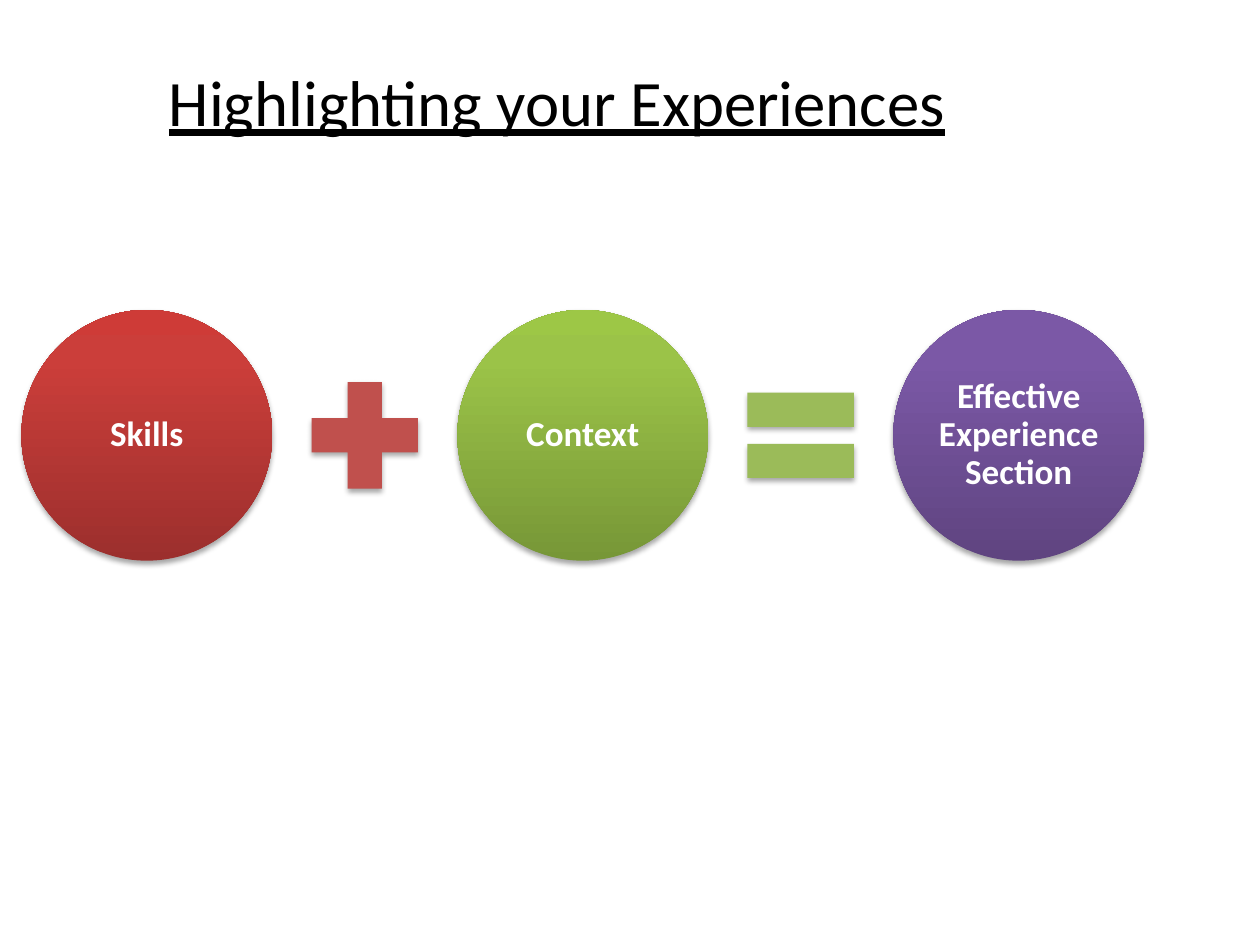
"""Build a slide that shows experience as an equation of circles."""
from copy import deepcopy
from dataclasses import dataclass

from lxml.etree import SubElement
from pptx import Presentation
from pptx.dml.color import RGBColor
from pptx.enum.shapes import MSO_SHAPE
from pptx.enum.text import MSO_ANCHOR, PP_ALIGN
from pptx.oxml.ns import qn
from pptx.util import Inches, Pt


@dataclass(frozen=True)
class Theme:
    """Colours and type sizes of the slide."""
    font: str = "Calibri"
    title_size: int = 37
    label_size: int = 20
    title: str = "000000"
    label: str = "FFFFFF"
    skills: tuple = ("9C2F2D", "CB3E3A", "CE3B37")
    context: tuple = ("779737", "9BC348", "9DC746")
    result: tuple = ("5F4480", "7B58A6", "7C57A8")
    plus: str = "C0504D"
    equal: str = "9BBB59"


THEME = Theme()
LEFT, PITCH, MIDDLE = 0.17, 3.46, 3.455
CIRCLE, SYMBOL = 1.99, 1.15


def add_text(tf, text, size, color, **style):
    """Write one centred run in a text frame."""
    tf.word_wrap = True
    tf.vertical_anchor = MSO_ANCHOR.MIDDLE
    p = tf.paragraphs[0]
    p.alignment = PP_ALIGN.CENTER
    r = p.add_run()
    r.text = text
    r.font.name = THEME.font
    r.font.size = Pt(size)
    r.font.color.rgb = RGBColor.from_string(color)
    for name, value in style.items():
        setattr(r.font, name, value)
    return p


def add_shadow(sp):
    """Give a shape a soft shadow just below it."""
    sp.shadow.inherit = False
    effects = sp._element.spPr.find(qn("a:effectLst"))
    shadow = SubElement(effects, qn("a:outerShdw"), blurRad=str(Pt(3.1)),
                        dist=str(Pt(1.8)), dir="5400000", rotWithShape="0")
    color = SubElement(shadow, qn("a:srgbClr"), val="000000")
    SubElement(color, qn("a:alpha"), val="35000")


def fill_gradient(sp, colors):
    """Fill a shape with three colours from bottom to top."""
    sp.fill.gradient()
    sp.fill.gradient_angle = 90
    stops = sp._element.spPr.find(qn("a:gradFill")).find(qn("a:gsLst"))
    stops.append(deepcopy(stops[0]))
    for stop, position, color in zip(sp.fill.gradient_stops, (0, 0.8, 1), colors):
        stop.position = position
        stop.color.rgb = RGBColor.from_string(color)


def add_shape(s, kind, left, size):
    """Add a square-bounded shape on the middle line."""
    sp = s.shapes.add_shape(kind, Inches(left), Inches(MIDDLE - size / 2),
                            Inches(size), Inches(size))
    sp.line.fill.background()
    add_shadow(sp)
    return sp


def add_circle(s, index, text, colors):
    """Add a labelled circle at its place in the equation."""
    sp = add_shape(s, MSO_SHAPE.OVAL, LEFT + index * PITCH, CIRCLE)
    fill_gradient(sp, colors)
    tf = sp.text_frame
    tf.margin_left = tf.margin_right = Inches(0.03)
    tf.margin_top = tf.margin_bottom = Inches(0.03)
    p = add_text(tf, text, THEME.label_size, THEME.label, bold=True)
    p.line_spacing = 0.9


def add_symbol(s, index, kind, color):
    """Add an operator centred in the gap after a circle."""
    left = LEFT + index * PITCH + (CIRCLE + PITCH - SYMBOL) / 2
    sp = add_shape(s, kind, left, SYMBOL)
    sp.fill.solid()
    sp.fill.fore_color.rgb = RGBColor.from_string(color)


def add_title(s, text):
    """Add the underlined title."""
    sp = s.shapes.add_textbox(Inches(LEFT), Inches(0.17), Inches(8.5), Inches(1.25))
    add_text(sp.text_frame, text, THEME.title_size, THEME.title, underline=True)


def main():
    """Build and save the slide."""
    prs = Presentation()
    prs.slide_width, prs.slide_height = Inches(10), Inches(7.5)
    s = prs.slides.add_slide(prs.slide_layouts[6])
    add_title(s, "Highlighting your Experiences")
    add_circle(s, 0, "Skills", THEME.skills)
    add_symbol(s, 0, MSO_SHAPE.MATH_PLUS, THEME.plus)
    add_circle(s, 1, "Context", THEME.context)
    add_symbol(s, 1, MSO_SHAPE.MATH_EQUAL, THEME.equal)
    add_circle(s, 2, "Effective Experience Section", THEME.result)
    prs.save("out.pptx")


if __name__ == "__main__":
    main()
